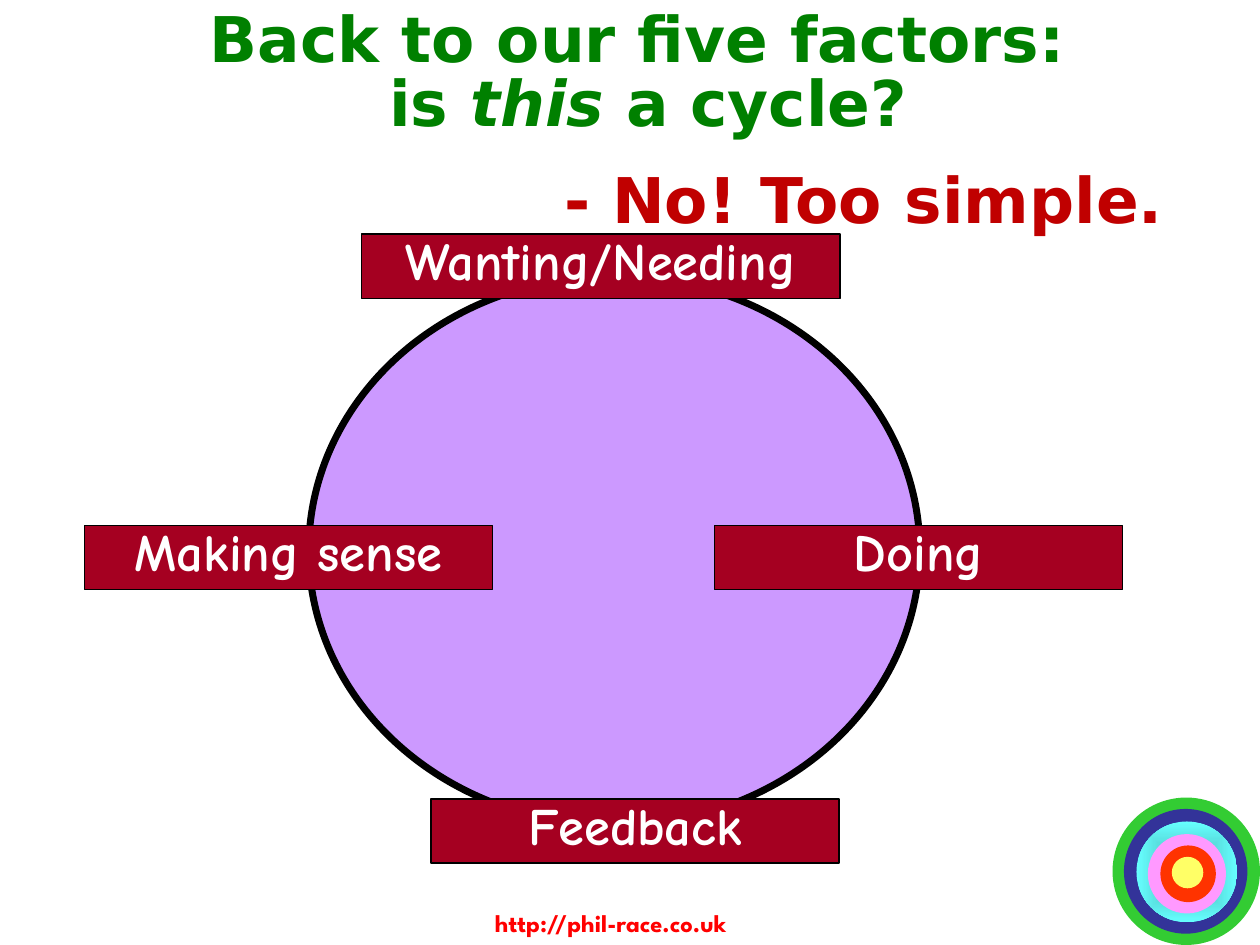
from dataclasses import dataclass

from lxml import etree
from pptx import Presentation
from pptx.dml.color import RGBColor
from pptx.enum.shapes import MSO_SHAPE as Preset
from pptx.enum.text import MSO_ANCHOR as Anchor, PP_ALIGN as Align
from pptx.oxml.ns import qn
from pptx.util import Inches, Pt

COLOURS = {
    "green": "008000", "dark red": "C00000", "red": "FF0000",
    "crimson": "A50021", "lilac": "CC99FF", "black": "000000", "white": "FFFFFF",
    "ring green": "33CC33", "ring blue": "333399", "ring teal": "47B2B2",
    "ring cyan": "66FFFF", "ring pink": "FF99FF", "ring orange": "FF3300",
    "ring yellow": "FFFF66",
}
HEADING, LABEL, FOOTER = "DejaVu Sans", "Comic Neue", "League Spartan"
LABEL_HEIGHT = 0.51


@dataclass
class Ring:
    left: float
    top: float
    width: float
    height: float
    colour: str


@dataclass
class Factor:
    text: str
    left: float
    top: float
    width: float = 3.24


@dataclass
class Span:
    text: str
    font: str
    size: int
    colour: str
    bold: bool = True
    italic: bool = False


RINGS = [
    Ring(8.83, 6.33, 1.17, 1.17, "ring green"),
    Ring(8.92, 6.42, 0.98, 0.99, "ring blue"),
    Ring(9.02, 6.52, 0.8, 0.8, "ring cyan"),
    Ring(9.11, 6.62, 0.62, 0.63, "ring pink"),
    Ring(9.21, 6.71, 0.44, 0.45, "ring orange"),
    Ring(9.3, 6.8, 0.25, 0.25, "ring yellow"),
]
FACTORS = [
    Factor("Wanting/Needing", 2.87, 1.86, 3.8),
    Factor("Doing", 5.67, 4.17),
    Factor("Feedback", 3.42, 6.34),
    Factor("Making sense", 0.67, 4.17),
]


def rgb(name: str) -> RGBColor:
    return RGBColor.from_string(COLOURS[name])


def add_figure(page, preset, left: float, top: float, width: float, height: float,
               fill: str, line_width: float = 0):
    figure = page.shapes.add_shape(
        preset, Inches(left), Inches(top), Inches(width), Inches(height))
    figure.shadow.inherit = False
    figure.fill.solid()
    figure.fill.fore_color.rgb = rgb(fill)
    if line_width:
        figure.line.color.rgb = rgb("black")
        figure.line.width = Pt(line_width)
    else:
        figure.line.fill.background()
    return figure


def shade_from_centre(figure, inner: str, outer: str) -> None:
    figure.fill.gradient()
    for stop, colour in zip(figure.fill.gradient_stops, (inner, outer)):
        stop.color.rgb = rgb(colour)
    linear = next(figure.element.iter(qn("a:lin")))
    centred = etree.Element(qn("a:path"), {"path": "shape"})
    etree.SubElement(centred, qn("a:fillToRect"), dict.fromkeys("ltrb", "50000"))
    linear.getparent().replace(linear, centred)


def write(frame, lines: list[list[Span]], align=Align.LEFT, spacing: float = 1.0,
          anchor=Anchor.TOP) -> None:
    frame.word_wrap = True
    frame.vertical_anchor = anchor
    for index, spans in enumerate(lines):
        para = frame.add_paragraph() if index else frame.paragraphs[0]
        para.alignment = align
        para.line_spacing = spacing
        for span in spans:
            run = para.add_run()
            run.text = span.text
            run.font.name = span.font
            run.font.size = Pt(span.size)
            run.font.bold = span.bold
            run.font.italic = span.italic
            run.font.color.rgb = rgb(span.colour)


def add_text(page, left: float, top: float, width: float, height: float,
             lines: list[list[Span]], **layout) -> None:
    box = page.shapes.add_textbox(
        Inches(left), Inches(top), Inches(width), Inches(height))
    write(box.text_frame, lines, **layout)


def main() -> None:
    deck = Presentation()
    deck.slide_width, deck.slide_height = Inches(10), Inches(7.5)
    page = deck.slides.add_slide(deck.slide_layouts[6])

    # Corner target
    for ring in RINGS:
        disc = add_figure(page, Preset.OVAL, ring.left, ring.top,
                          ring.width, ring.height, ring.colour)
        if ring.colour == "ring cyan":
            shade_from_centre(disc, "ring teal", "ring cyan")

    # Footer address
    add_text(page, 3.83, 7.16, 2.89, 0.34,
             [[Span("http://phil-race.co.uk", FOOTER, 14, "red")]])

    # Title
    title = [
        [Span("Back to our five factors: ", HEADING, 36, "green")],
        [Span("is ", HEADING, 36, "green"),
         Span("this", HEADING, 36, "green", italic=True),
         Span(" a cycle?", HEADING, 36, "green")],
    ]
    add_text(page, 0.9, 0, 8.49, 1.19, title,
             align=Align.CENTER, spacing=0.85, anchor=Anchor.MIDDLE)

    # Cycle and its factors
    add_figure(page, Preset.OVAL, 2.45, 2.19, 4.85, 4.36, "lilac", 4)
    for factor in FACTORS:
        label = add_figure(page, Preset.RECTANGLE, factor.left, factor.top,
                           factor.width, LABEL_HEIGHT, "crimson", 1)
        write(label.text_frame, [[Span(factor.text, LABEL, 30, "white")]],
              align=Align.CENTER, spacing=0.8)

    # Answer
    gap = Span(" ", LABEL, 40, "dark red", bold=False)
    no, too, simple = (Span(word, HEADING, 36, "dark red")
                       for word in ("- No!", "Too", "simple."))
    add_text(page, 4.38, 1.17, 5.23, 0.77, [[no, gap, too, gap, simple]])

    deck.save("out.pptx")


if __name__ == "__main__":
    main()
